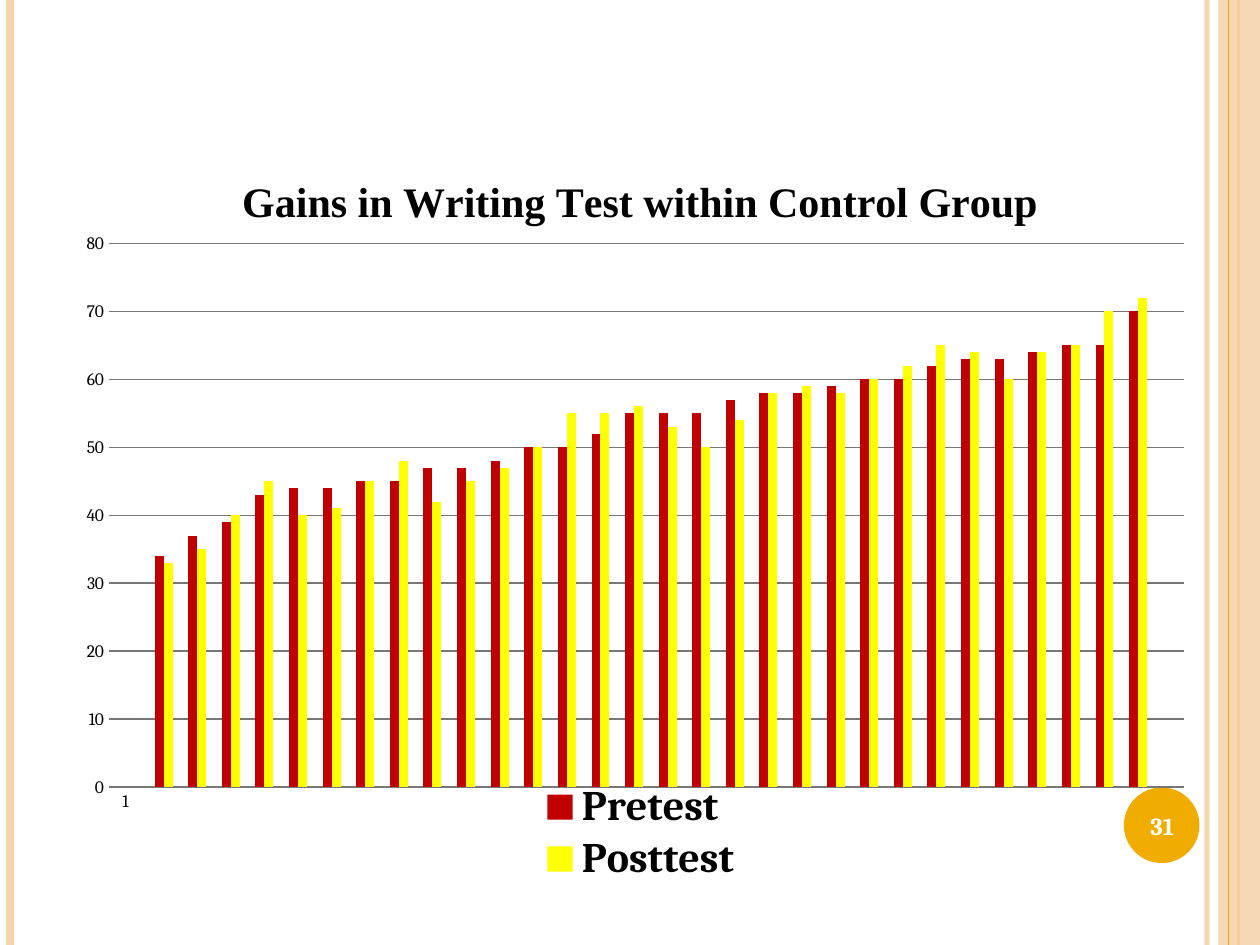
"""Build the slide with the pretest and posttest chart of the control group."""
from dataclasses import dataclass

from lxml import etree
from pptx import Presentation
from pptx.chart.data import CategoryChartData
from pptx.dml.color import RGBColor
from pptx.enum.chart import XL_CHART_TYPE as CT, XL_LEGEND_POSITION as LP, XL_TICK_MARK as TM
from pptx.enum.shapes import MSO_CONNECTOR as CONN, MSO_SHAPE as SHAPE
from pptx.enum.text import MSO_ANCHOR as ANCHOR, PP_ALIGN as ALIGN
from pptx.oxml import parse_xml
from pptx.oxml.ns import nsdecls, qn
from pptx.util import Inches, Pt

COLORS = {
    "peach": "F6D3AB", "amber": "F0AD00", "red": "C00000", "yellow": "FFFF00",
    "black": "000000", "white": "FFFFFF", "grid": "777777",
}
PRETEST = [34, 37, 39, 43, 44, 44, 45, 45, 47, 47, 48, 50, 50, 52, 55,
           55, 55, 57, 58, 58, 59, 60, 60, 62, 63, 63, 64, 65, 65, 70]
POSTTEST = [33, 35, 40, 45, 40, 41, 45, 48, 42, 45, 47, 50, 55, 55, 56,
            53, 50, 54, 58, 59, 58, 60, 62, 65, 64, 60, 64, 65, 70, 72]


@dataclass
class Stripe:
    """A vertical line over the full slide height."""
    x: float
    color: str
    width: float
    alpha: int = 100


@dataclass
class Series:
    """One column series and its colour."""
    name: str
    values: list
    color: str


BACK_STRIPES = [Stripe(9.58, "peach", 3, 93), Stripe(0.08, "peach", 4.5),
                Stripe(9.83, "amber", 1.5)]
FRONT_STRIPE = Stripe(9.75, "amber", 0.75)
SERIES = [
    Series("Series 1", [None, 0] + [None] * 30, "amber"),
    Series("Pretest", [None, *PRETEST, None], "red"),
    Series("Posttest", [None, *POSTTEST, None], "yellow"),
]


def rgb(name: str) -> RGBColor:
    """Look up a palette colour."""
    return RGBColor.from_string(COLORS[name])


def set_alpha(sp, percent: int) -> None:
    """Make the first solid colour of a shape translucent."""
    color = next(sp._element.spPr.iter(qn("a:srgbClr")))
    etree.SubElement(color, qn("a:alpha")).set("val", str(percent * 1000))


def add_stripe(slide, stripe: Stripe) -> None:
    """Draw one vertical stripe."""
    x = Inches(stripe.x)
    line = slide.shapes.add_connector(CONN.STRAIGHT, x, 0, x, Inches(7.5))
    line.line.color.rgb = rgb(stripe.color)
    line.line.width = Pt(stripe.width)
    if stripe.alpha < 100:
        set_alpha(line, stripe.alpha)
    etree.SubElement(line._element.spPr, qn("a:effectLst"))


def add_filled(slide, kind, box: tuple, color: str, alpha: int = 100) -> None:
    """Draw a preset shape with a plain fill and no outline."""
    sp = slide.shapes.add_shape(kind, *map(Inches, box))
    sp.shadow.inherit = False
    sp.fill.solid()
    sp.fill.fore_color.rgb = rgb(color)
    sp.line.fill.background()
    if alpha < 100:
        set_alpha(sp, alpha)


def style_font(font, *, size: float, color: str = "black", name: str = "Cambria",
               bold: bool = False) -> None:
    """Apply the given format to a font."""
    font.size, font.name, font.bold = Pt(size), name, bold
    font.color.rgb = rgb(color)


def add_text(tf, text: str, *, align=ALIGN.CENTER, **fmt) -> None:
    """Write formatted text into the first paragraph of a text frame."""
    p = tf.paragraphs[0]
    p.alignment = align
    r = p.add_run()
    r.text = text
    style_font(r.font, **fmt)


def make_layout(target: str = "", **place: float):
    """Return a manual chart layout, placed in fractions of the chart."""
    inner = f'<c:layoutTarget val="{target}"/>' if target else ""
    modes = "".join(f'<c:{k}Mode val="edge"/>' for k in place if k in "xy")
    sizes = "".join(f'<c:{k} val="{v}"/>' for k, v in place.items())
    return parse_xml(f'<c:layout {nsdecls("c")}><c:manualLayout>{inner}{modes}{sizes}'
                     "</c:manualLayout></c:layout>")


def set_layout(element, layout, after: str = "") -> None:
    """Put a layout into a chart part, after the named child or first."""
    for old in element.findall(qn("c:layout")):
        element.remove(old)
    if after:
        element.findall(qn(after))[-1].addnext(layout)
    else:
        element.insert(0, layout)


def format_axes(chart) -> None:
    """Format both axes and the gridlines."""
    for axis in (chart.category_axis, chart.value_axis):
        axis.major_tick_mark = axis.minor_tick_mark = TM.NONE
        style_font(axis.tick_labels.font, size=10)
    chart.category_axis.format.line.color.rgb = rgb("grid")
    values = chart.value_axis
    values.minimum_scale, values.maximum_scale, values.major_unit = 0, 80, 10
    values.format.line.fill.background()
    values.has_major_gridlines = True
    values.major_gridlines.format.line.color.rgb = rgb("grid")
    values.major_gridlines.format.line.width = Pt(0.75)


def format_legend(chart) -> None:
    """Place the legend below the plot without the helper series."""
    chart.has_legend = True
    legend = chart.legend
    legend.position, legend.include_in_layout = LP.BOTTOM, False
    style_font(legend.font, size=24, bold=True)
    element = legend._element
    element.find(qn("c:legendPos")).addnext(parse_xml(
        f'<c:legendEntry {nsdecls("c")}><c:idx val="0"/><c:delete val="1"/></c:legendEntry>'))
    set_layout(element, make_layout(x=0.42, y=0.84, w=0.17, h=0.14), "c:legendEntry")


def add_gains_chart(slide) -> None:
    """Draw the clustered column chart."""
    data = CategoryChartData()
    data.categories = ["1"] + [""] * 31
    for series in SERIES:
        data.add_series(series.name, series.values)
    box = map(Inches, (0.5, 1.08, 9.08, 6.08))
    chart = slide.shapes.add_chart(CT.COLUMN_CLUSTERED, *box, data).chart
    style_font(chart.font, size=10)
    chart._chartSpace.find(qn("c:chart")).addnext(parse_xml(
        f'<c:spPr {nsdecls("c", "a")}><a:noFill/><a:ln><a:noFill/></a:ln></c:spPr>'))

    chart.has_title = True
    title = chart.chart_title
    add_text(title.text_frame, "Gains in Writing Test within Control Group",
             size=24, name="Times New Roman", bold=True)
    title.include_in_layout = False
    set_layout(title._element, make_layout(x=0.15, y=0.04), "c:tx")

    plot = chart.plots[0]
    plot.gap_width, plot.overlap, plot.vary_by_categories = 75, 0, False
    for drawn, series in zip(plot.series, SERIES):
        drawn.format.fill.solid()
        drawn.format.fill.fore_color.rgb = rgb(series.color)
    set_layout(chart._chartSpace.chart.plotArea,
               make_layout("inner", x=0.04, y=0.14, w=0.94, h=0.71))
    format_axes(chart)
    format_legend(chart)


def main() -> None:
    """Build and save the slide."""
    prs = Presentation()
    prs.slide_width, prs.slide_height = Inches(10), Inches(7.5)
    s = prs.slides.add_slide(prs.slide_layouts[6])
    for stripe in BACK_STRIPES:
        add_stripe(s, stripe)
    add_filled(s, SHAPE.RECTANGLE, (9.67, 0, 0.33, 7.5), "peach", alpha=87)
    add_stripe(s, FRONT_STRIPE)
    add_filled(s, SHAPE.OVAL, (8.92, 6.25, 0.6, 0.6), "amber")
    add_gains_chart(s)
    tf = s.shapes.add_textbox(*map(Inches, (8.89, 6.27, 0.67, 0.57))).text_frame
    tf.word_wrap, tf.vertical_anchor = True, ANCHOR.MIDDLE
    add_text(tf, "31", size=14, color="white", bold=True)
    prs.save("out.pptx")


if __name__ == "__main__":
    main()
